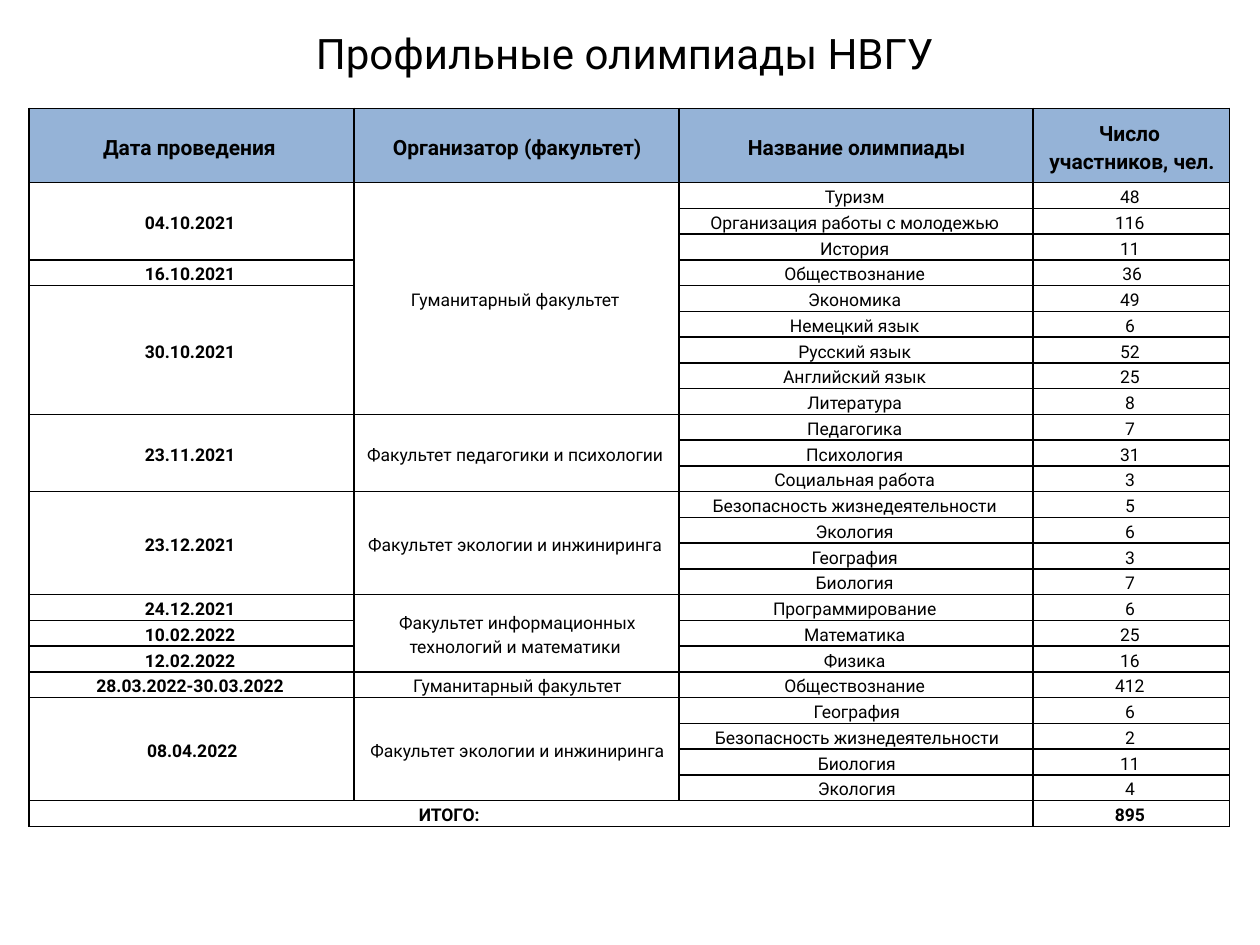
from itertools import pairwise

from lxml import etree
from pptx import Presentation
from pptx.dml.color import RGBColor
from pptx.enum.text import MSO_ANCHOR, PP_ALIGN
from pptx.oxml.ns import qn
from pptx.util import Inches, Pt

MIDDLE = MSO_ANCHOR.MIDDLE
CENTER = PP_ALIGN.CENTER
FONT = "Roboto"
COLORS = {"ink": "000000", "head": "95B3D7", "paper": "FFFFFF"}

TITLE = "Профильные олимпиады НВГУ "
HEADS = [
    ["Дата проведения "],
    ["Организатор (факультет)"],
    ["Название олимпиады"],
    ["Число ", "участников, чел."],
]
ROWS = [
    ("04.10.2021 ", "Гуманитарный факультет ", "Туризм ", "48 "),
    ("", "", "Организация работы с молодежью ", "116 "),
    ("", "", "История ", "11 "),
    ("16.10.2021 ", "", "Обществознание ", "36"),
    ("30.10.2021 ", "", "Экономика ", "49 "),
    ("", "", "Немецкий язык ", "6 "),
    ("", "", "Русский язык ", "52 "),
    ("", "", "Английский язык ", "25 "),
    ("", "", "Литература ", "8 "),
    ("23.11.2021 ", "Факультет педагогики и психологии ", "Педагогика ", "7 "),
    ("", "", "Психология ", "31 "),
    ("", "", "Социальная работа ", "3 "),
    ("23.12.2021 ", "Факультет экологии и инжиниринга ",
     "Безопасность жизнедеятельности ", "5 "),
    ("", "", "Экология ", "6 "),
    ("", "", "География ", "3 "),
    ("", "", "Биология ", "7 "),
    ("24.12.2021 ", "Факультет информационных технологий и математики ",
     "Программирование ", "6 "),
    ("10.02.2022 ", "", "Математика ", "25 "),
    ("12.02.2022 ", "", "Физика ", "16 "),
    ("28.03.2022-30.03.2022 ", "Гуманитарный факультет",
     "Обществознание ", "412 "),
    ("08.04.2022", "Факультет экологии и инжиниринга", "География", "6 "),
    ("", "", "Безопасность жизнедеятельности", "2 "),
    ("", "", "Биология", "11 "),
    ("", "", "Экология", "4 "),
]
TOTAL = ("ИТОГО:", "895 ")
WIDTHS = [2.58, 2.58, 2.81, 1.56]
HEIGHT, HEAD = 5.7, 0.59
INSET = 1.33


def add_run(para, text, size, bold=False):
    run = para.add_run()
    run.text = text
    font = run.font
    font.name, font.size, font.bold = FONT, Pt(size), bold
    font.color.rgb = RGBColor.from_string(COLORS["ink"])


def style_cell(cell, fill):
    cell.vertical_anchor = MIDDLE
    cell.margin_left, cell.margin_right = Inches(0.03), Inches(0.02)
    cell.margin_top, cell.margin_bottom = Inches(0.01), 0
    props = cell._tc.get_or_add_tcPr()
    for side in ("a:lnL", "a:lnR", "a:lnT", "a:lnB"):
        line = etree.SubElement(props, qn(side), w=str(Pt(1)))
        solid = etree.SubElement(line, qn("a:solidFill"))
        etree.SubElement(solid, qn("a:srgbClr"), val=COLORS["ink"])
    cell.fill.solid()
    cell.fill.fore_color.rgb = RGBColor.from_string(COLORS[fill])


def write(cell, lines, size=10, bold=False):
    frame = cell.text_frame
    for i, text in enumerate(lines):
        para = frame.add_paragraph() if i else frame.paragraphs[0]
        para.alignment, para.line_spacing = CENTER, 1.15
        para.space_after = Pt(0 if len(lines) > 1 else 10)
        add_run(para, text, size, bold)


def add_title(slide):
    title = slide.shapes.title
    title.left, title.top = 0, 0
    title.width, title.height = Inches(10), Inches(0.84)
    frame = title.text_frame
    frame.vertical_anchor = MIDDLE
    para = frame.paragraphs[0]
    para.alignment = CENTER
    add_run(para, TITLE, 24)


def add_grid(slide):
    last = len(ROWS) + 1
    table = slide.shapes.add_table(
        last + 1, len(WIDTHS), Inches(0.23), Inches(0.86),
        Inches(sum(WIDTHS)), Inches(HEIGHT)).table
    for col, width in zip(table.columns, WIDTHS):
        col.width = Inches(width)
    for r, row in enumerate(table.rows):
        row.height = Inches((HEIGHT - HEAD) / last if r else HEAD)
        for cell in row.cells:
            style_cell(cell, "paper" if r else "head")

    for c, lines in enumerate(HEADS):
        write(table.cell(0, c), lines, 12, True)
    for r, row in enumerate(ROWS, 1):
        for c, value in enumerate(row):
            if value:
                write(table.cell(r, c), [value], bold=c == 0)

    for c in (0, 1):
        starts = [r for r, row in enumerate(ROWS, 1) if row[c]]
        for top, end in pairwise(starts + [last]):
            if end - top > 1:
                table.cell(top, c).merge(table.cell(end - 1, c))

    label = table.cell(last, 0)
    label.merge(table.cell(last, 2))
    label.margin_right = Inches(INSET)
    write(label, [TOTAL[0]], bold=True)
    write(table.cell(last, 3), [TOTAL[1]], bold=True)


def main():
    """Build the slide with the table of olympiads."""
    deck = Presentation()
    deck.slide_width, deck.slide_height = Inches(10), Inches(7.5)
    slide = deck.slides.add_slide(deck.slide_layouts[5])
    add_title(slide)
    add_grid(slide)
    deck.save("out.pptx")


if __name__ == "__main__":
    main()
